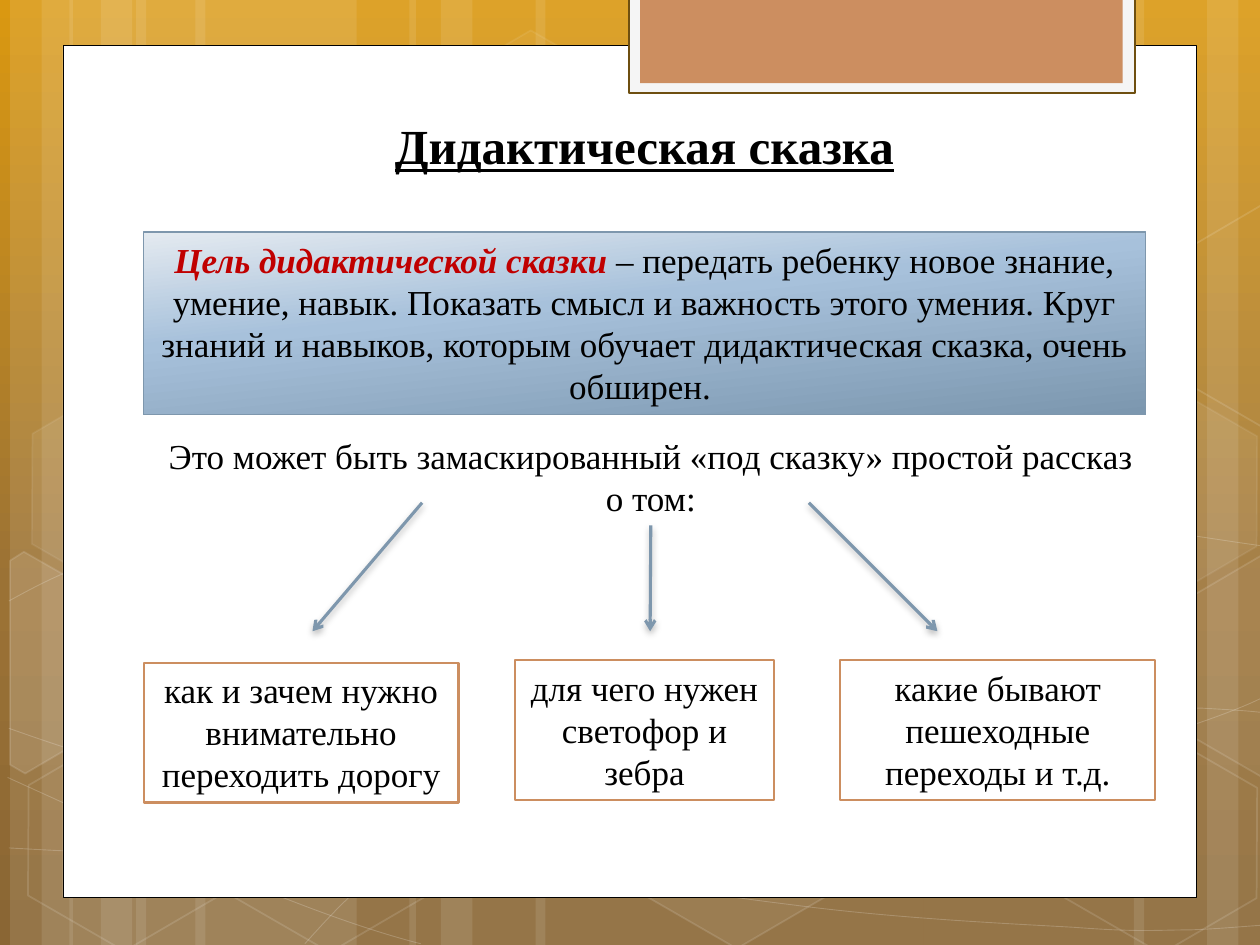
from lxml import etree
from pptx import Presentation
from pptx import util as u
from pptx.dml.color import RGBColor
from pptx.enum import shapes, text
from pptx.oxml.ns import qn

HUES = {
    "white": "FFFFFF", "black": "000000", "red": "C00000",
    "copper": "CC8E60", "pale": "F5F5F5", "brown": "6E4F10", "steel": "7E97AD",
}
BACK = [(0, "DA9811"), (62, "9B7235"), (100, "8A6634")]
SKY = [(0, "E4EAF0"), (40, "A7C1DB"), (100, "7C97AF")]
FONT = "Times New Roman"
RECT = shapes.MSO_SHAPE.RECTANGLE
HEX = shapes.MSO_SHAPE.HEXAGON

# Backdrop, on an inch grid: stripes (left, width)
BARS = [(1.08, 1.75), (0.08, 0.5), (0.33, 0.83), (1.55, 1.75), (0.55, 0.5),
        (0.8, 0.83), (7.33, 1.75), (9.58, 0.5), (9, 0.83), (4.25, 3.08),
        (3.25, 0.5), (3.5, 0.83)]
# Each curve: a start, then Bezier triples
CURVES = [
    [(0.07, 6.73), (0.61, 6.76), (1.15, 6.79), (1.9, 6.78), (2.65, 6.77),
     (3.58, 6.75), (4.58, 6.65), (5.58, 6.55), (7, 6.36), (7.92, 6.17),
     (8.83, 5.98), (9.77, 5.68), (10.07, 5.51)],
    [(0.07, 4.77), (0.36, 4.61), (0.65, 4.46), (1.21, 4.31), (1.78, 4.16),
     (2.59, 3.94), (3.47, 3.87), (4.36, 3.8), (5.44, 3.79), (6.54, 3.87),
     (7.64, 3.95), (9.47, 4.26), (10.07, 4.34)],
    [(0.06, 6.17), (1.27, 6.72), (2.47, 7.27), (3.34, 7.49)],
    [(0.07, 5.78), (0.38, 5.89), (0.7, 6), (1.28, 6.16), (1.86, 6.31),
     (2.73, 6.56), (3.57, 6.73), (4.4, 6.9), (5.45, 7.08), (6.28, 7.18),
     (7.11, 7.29), (8, 7.33), (8.53, 7.36), (9.05, 7.4), (9.19, 7.38),
     (9.45, 7.38), (9.71, 7.37), (9.89, 7.35), (10.07, 7.34)],
    [(2.42, 7.49), (2.6, 7.29), (2.78, 7.09), (3.02, 6.91), (3.26, 6.73),
     (3.6, 6.53), (3.88, 6.39), (4.16, 6.25), (4.33, 6.19), (4.7, 6.09),
     (5.06, 5.99), (5.73, 5.85), (6.08, 5.78), (6.44, 5.71), (6.49, 5.71),
     (6.8, 5.69), (7.11, 5.66), (7.6, 5.63), (7.94, 5.62), (8.29, 5.61),
     (8.86, 5.62), (8.86, 5.62), (9.08, 5.62), (9.31, 5.62), (9.53, 5.62),
     (9.71, 5.63), (9.88, 5.64), (9.97, 5.65), (10.06, 5.66), (10.03, 5.65),
     (10.06, 5.66)],
]
# Hexagons: left, top, fill opacity, line opacity
CELLS = [(3.34, 0.36, 4, 8), (4.97, 5.89, 6, 12), (0.11, 5.91, 0, 12),
         (0.14, 3.12, 7, 8), (1.74, 5.92, 0, 12), (7.53, 4.53, 10, 12),
         (8.34, 5.93, 0, 12), (8.34, 3.14, 7, 8)]
# Hexagons cut by the slide edge: points, fill opacity
CUTS = [
    ([(0.08, 4.45), (0.19, 4.38), (0.96, 4.82), (0.95, 5.7), (0.2, 6.14),
      (0.08, 6.07)], 10),
    ([(9.26, 4.85), (10.01, 4.41), (10.09, 4.46), (10.09, 6.13),
      (10.02, 6.17), (9.26, 5.73)], 4),
    ([(9.26, 2.07), (10.01, 1.63), (10.1, 1.68), (10.09, 3.35),
      (10.02, 3.39), (9.26, 2.95)], 0),
]


def cm(grid):
    """Length of a distance on the inch grid."""
    return u.Cm(grid * 2.54)


def tint(name):
    return RGBColor.from_string(HUES[name])


def fade(node, clear):
    """Set the opacity, in percent, of the solid fill under node."""
    tone = node.find(qn("a:solidFill"))[0]
    etree.SubElement(tone, qn("a:alpha"), val=str(clear * 1000))


def blend(fill, root, stops, angle):
    fill.gradient()
    fill.gradient_angle = 360 - angle
    ramp = root.find(".//" + qn("a:gsLst"))
    for old in list(ramp):
        ramp.remove(old)
    for pos, hue in stops:
        stop = etree.SubElement(ramp, qn("a:gs"), pos=str(pos * 1000))
        etree.SubElement(stop, qn("a:srgbClr"), val=hue)


def style(shape, fill=None, line=None, width=1, veil=100, haze=100):
    """Fill and outline; veil and haze are their opacities."""
    shape.shadow.inherit = False
    props = shape._element.spPr
    if fill and veil:
        shape.fill.solid()
        shape.fill.fore_color.rgb = tint(fill)
        if veil < 100:
            fade(props, veil)
    else:
        shape.fill.background()
    if line:
        shape.line.color.rgb = tint(line)
        shape.line.width = u.Pt(width)
        if haze < 100:
            fade(props.find(qn("a:ln")), haze)
    else:
        shape.line.fill.background()
    return shape


def block(page, x, y, w, h, kind=RECT, **look):
    shape = page.shapes.add_shape(kind, cm(x), cm(y), cm(w), cm(h))
    return style(shape, **look)


def trace(page, dots, close, **look):
    dots = [(cm(x), cm(y)) for x, y in dots]
    pen = page.shapes.build_freeform(*dots[0], scale=1)
    pen.add_line_segments(dots[1:], close=close)
    return style(pen.convert_to_shape(), **look)


def bend(shape):
    """Turn each three line segments of an outline into one Bezier curve."""
    track = shape._element.find(".//" + qn("a:path"))
    legs = track.findall(qn("a:lnTo"))
    for i in range(0, len(legs), 3):
        curve = etree.SubElement(track, qn("a:cubicBezTo"))
        for leg in legs[i:i + 3]:
            curve.append(leg[0])
            track.remove(leg)


def write(shape, words, size=20, hue="black", bold=False, ital=False, under=False):
    """Add a centred run to the shape's paragraph."""
    frame = shape.text_frame
    frame.word_wrap = True
    frame.auto_size = text.MSO_AUTO_SIZE.SHAPE_TO_FIT_TEXT
    frame.vertical_anchor = text.MSO_ANCHOR.TOP
    para = frame.paragraphs[0]
    para.alignment = text.PP_ALIGN.CENTER
    run = para.add_run()
    run.text = words
    font = run.font
    font.name, font.size, font.color.rgb = FONT, u.Pt(size), tint(hue)
    font.bold, font.italic, font.underline = bold, ital, under


def label(slide, x, y, w, h, words, **form):
    box = slide.shapes.add_textbox(cm(x), cm(y), cm(w), cm(h))
    write(box, words, **form)
    return box


def arrow(slide, x1, y1, x2, y2, start=None):
    line = slide.shapes.add_connector(
        shapes.MSO_CONNECTOR.STRAIGHT, cm(x1), cm(y1), cm(x2), cm(y2))
    if start is not None:
        line.begin_connect(start, 2)
    line.line.color.rgb = tint("steel")
    line.line.width = u.Pt(1.75)
    props = line._element.spPr
    etree.SubElement(props.find(qn("a:ln")), qn("a:tailEnd"), type="arrow")
    glow = etree.SubElement(
        etree.SubElement(props, qn("a:effectLst")), qn("a:outerShdw"),
        blurRad=str(u.Pt(4)), dist=str(u.Pt(2)), dir="5400000", rotWithShape="0")
    tone = etree.SubElement(glow, qn("a:srgbClr"), val=HUES["black"])
    etree.SubElement(tone, qn("a:alpha"), val="28000")


def scene(slide):
    blend(slide.background.fill, slide._element, BACK, 90)
    group = slide.shapes.add_group_shape()
    for x, w in BARS:
        block(group, x, 0, w, 7.5, fill="white", veil=10)
    for knots in CURVES:
        bend(trace(group, knots, False, line="white", width=0.5, haze=20))
    for x, y, veil, haze in CELLS:
        cell = block(group, x, y, 1.75, 1.52, HEX, fill="white", veil=veil,
                     line="white", haze=haze)
        cell.adjustments[0] = 0.285
        cell.rotation = 30
    for dots, veil in CUTS:
        trace(group, dots, True, fill="white", veil=veil, line="white", haze=12)
    # White sheet and tab
    block(slide, 0.5, 0.36, 9, 6.76, fill="white", line="black", width=0.5)
    block(slide, 4.99, -0.02, 4.02, 0.76, fill="pale", line="brown", width=1.25)
    block(slide, 5.08, -0.02, 3.83, 0.68, fill="copper")


def main():
    deck = Presentation()
    deck.slide_width, deck.slide_height = cm(10), cm(7.5)
    slide = deck.slides.add_slide(deck.slide_layouts[6])
    scene(slide)

    # Title and goal
    label(slide, 2.83, 0.87, 4.57, 0.57, "Дидактическая сказка",
          size=28, bold=True, under=True)
    goal = block(slide, 1.14, 1.84, 7.95, 1.45, line="steel", width=0.75)
    blend(goal.fill, goal._element, SKY, 84)
    write(goal, "Цель дидактической сказки", hue="red", bold=True, ital=True)
    write(goal, " – передать ребенку новое знание, умение, навык. Показать "
                "смысл и важность этого умения. Круг знаний и навыков, которым "
                "обучает дидактическая сказка, очень обширен. ")
    lead = label(slide, 1.17, 3.4, 7.99, 0.77,
                 "Это может быть замаскированный «под сказку» простой рассказ о том:")

    # Topics
    for x, y, w, words in [
        (1.14, 5.26, 2.5, "как и зачем нужно внимательно переходить дорогу"),
        (4.09, 5.24, 2.05, "для чего нужен светофор и зебра"),
        (6.67, 5.24, 2.5, "какие бывают пешеходные переходы и т.д."),
    ]:
        topic = block(slide, x, y, w, 1.11, fill="white", line="copper", width=1.25)
        write(topic, words)

    # Arrows to the topics
    arrow(slide, 3.35, 3.99, 2.48, 5.01)
    arrow(slide, 5.17, 4.17, 5.16, 5.01, start=lead)
    arrow(slide, 6.42, 3.99, 7.44, 5.01)

    deck.save("out.pptx")


if __name__ == "__main__":
    main()
